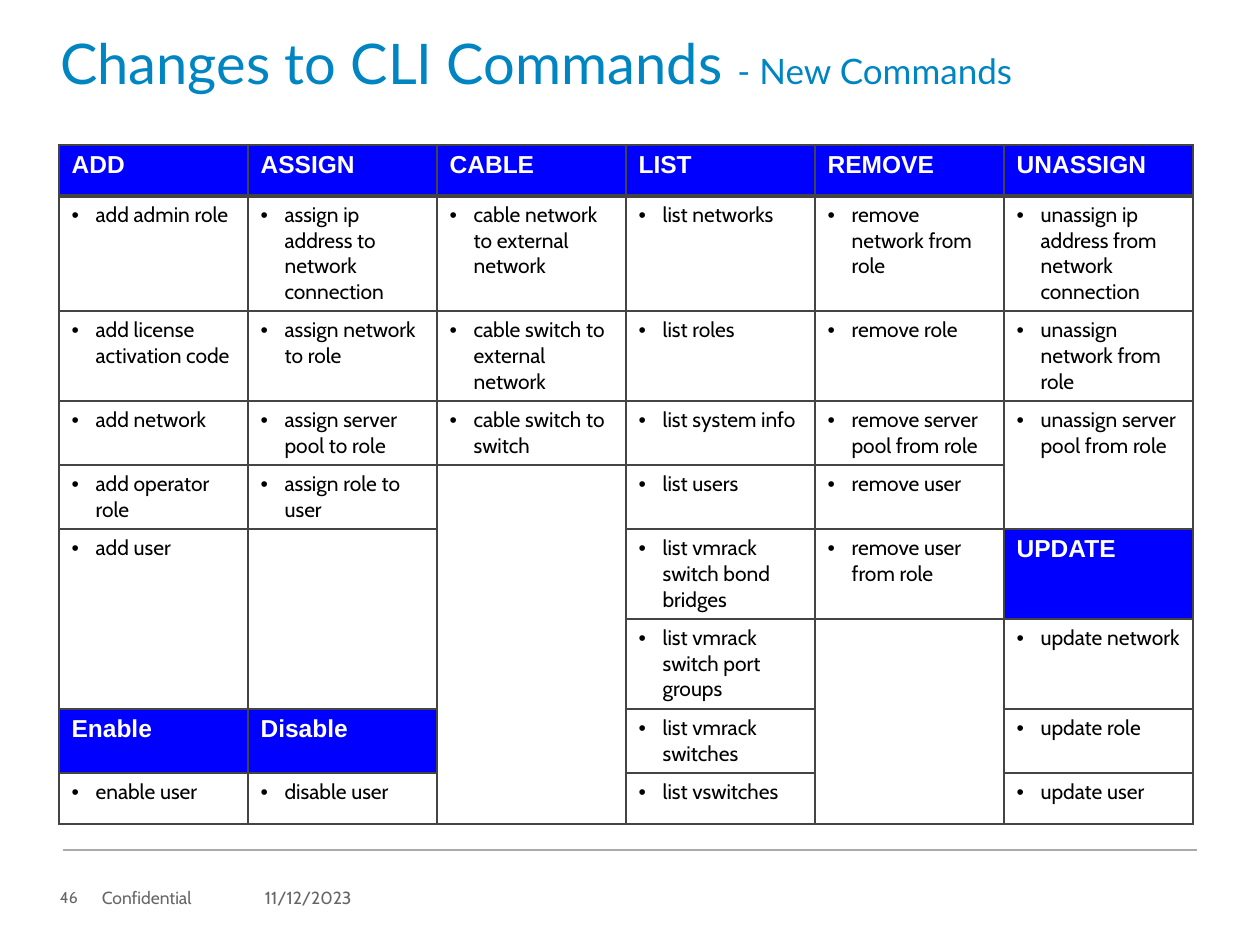
from lxml import etree
from pptx import Presentation
from pptx.dml.color import RGBColor
from pptx.enum.shapes import MSO_CONNECTOR
from pptx.enum.text import MSO_ANCHOR, MSO_AUTO_SIZE, PP_ALIGN
from pptx.oxml.ns import qn
from pptx.util import Emu, Pt

TOP, MIDDLE = MSO_ANCHOR.TOP, MSO_ANCHOR.MIDDLE
LEFT = PP_ALIGN.LEFT
STRAIGHT = MSO_CONNECTOR.STRAIGHT
FIXED = MSO_AUTO_SIZE.NONE

SKY = RGBColor(0x00, 0x85, 0xC3)
BLUE = RGBColor(0x00, 0x00, 0xFF)
WHITE = RGBColor(0xFF, 0xFF, 0xFF)
BLACK = RGBColor(0x00, 0x00, 0x00)
DARK = RGBColor(0x44, 0x44, 0x44)
GRAY = RGBColor(0x66, 0x66, 0x66)
PALE = RGBColor(0xAA, 0xAA, 0xAA)

TITLE = [("Changes to CLI Commands ", 32), ("- New Commands", 20)]
ROWS = [
    ["ADD", "ASSIGN", "CABLE", "LIST", "REMOVE", "UNASSIGN"],
    ["add admin role", "assign ip address to network connection",
     "cable network to external network", "list networks",
     "remove network from role", "unassign ip address from network connection"],
    ["add license activation code", "assign network to role",
     "cable switch to external network", "list roles", "remove role",
     "unassign network from role"],
    ["add network", "assign server pool to role", "cable switch to switch",
     "list system info", "remove server pool from role",
     "unassign server pool from role"],
    ["add operator role", "assign role to user", "", "list users",
     "remove user", ""],
    ["add user", "", "", "list vmrack switch bond bridges",
     "remove user from role", "UPDATE"],
    ["", "", "", "list vmrack switch port groups", "", "update network"],
    ["Enable", "Disable", "", "list vmrack switches", "", "update role"],
    ["enable user", "disable user", "", "list vswitches", "", "update user"],
]
HEADS = set(ROWS[0]) | {"UPDATE", "Enable", "Disable"}
# column, first row, last row
MERGES = [(5, 3, 4), (2, 4, 8), (0, 5, 6), (1, 5, 6), (4, 6, 8)]
HEIGHTS = [51, 115, 90, 64, 64, 89, 90, 64, 51]
COL = 189
INDENT = 24
# text, left, width, size, left inset
FOOTERS = [("Confidential", 102, 260, 10, 0), ("46", 60, 35, 9, 0),
           ("11/12/2023", 252, 126, 10, 13)]


def px(n):
    return Emu(n * 914400 // 126)


def style(font, name, size, color, bold=False):
    font.name, font.size, font.bold = name, Pt(size), bold
    font.color.rgb = color


def place(shape, x, y, w, h):
    shape.left, shape.top, shape.width, shape.height = map(px, (x, y, w, h))


def inset(frame, left, right, upper=0, lower=0):
    frame.margin_left, frame.margin_right = px(left), px(right)
    frame.margin_top, frame.margin_bottom = px(upper), px(lower)


def border(cell, row):
    """Outline a cell; the rule under the top row is thicker."""
    props = cell._tc.get_or_add_tcPr()
    widths = {"L": 1, "R": 1, "T": 3 if row == 1 else 1,
              "B": 3 if row == 0 else 1}
    for i, (side, width) in enumerate(widths.items()):
        line = etree.Element(qn("a:ln" + side), w=str(Pt(width)))
        fill = etree.SubElement(line, qn("a:solidFill"))
        etree.SubElement(fill, qn("a:srgbClr"), val=str(DARK))
        props.insert(i, line)


def bullet(para):
    props = para._p.get_or_add_pPr()
    props.set("marL", str(px(INDENT)))
    props.set("indent", str(-px(INDENT)))
    etree.SubElement(props, qn("a:buFont"), typeface="Arial")
    etree.SubElement(props, qn("a:buChar"), char="•")


def add_title(slide):
    shape = slide.shapes.title
    place(shape, 60, 36, 1135, 109)
    frame = shape.text_frame
    inset(frame, 0, 0)
    frame.vertical_anchor, frame.auto_size = TOP, FIXED
    frame.word_wrap = True
    para = frame.paragraphs[0]
    para.alignment, para.line_spacing = LEFT, 0.9
    for text, size in TITLE:
        run = para.add_run()
        run.text = text
        style(run.font, "Lato", size, SKY)


def add_grid(slide):
    count = len(ROWS[0])
    table = slide.shapes.add_table(
        len(ROWS), count, px(59), px(145), px(COL * count),
        px(sum(HEIGHTS))).table
    for col in table.columns:
        col.width = px(COL)
    for r, (texts, height) in enumerate(zip(ROWS, HEIGHTS)):
        table.rows[r].height = px(height)
        for c, text in enumerate(texts):
            cell = table.cell(r, c)
            head = text in HEADS
            cell.fill.solid()
            cell.fill.fore_color.rgb = BLUE if head else WHITE
            border(cell, r)
            para = cell.text_frame.paragraphs[0]
            para.text = text
            if head:
                style(para.font, "Arial", 14, WHITE, True)
            else:
                if text:
                    bullet(para)
                style(para.font, "Cabin", 12, BLACK)
            for run in para.runs:
                look = ("Arial", 14, WHITE, True) if head else (
                    "Cabin", 12, BLACK)
                style(run.font, *look)
    for c, first, last in MERGES:
        table.cell(first, c).merge(table.cell(last, c))


def add_footer(slide):
    rule = slide.shapes.add_connector(
        STRAIGHT, px(63), px(850), px(1197), px(850))
    rule.line.color.rgb, rule.line.width = PALE, Pt(0.75)
    etree.SubElement(rule._element.spPr, qn("a:effectLst"))
    for text, x, width, size, left in FOOTERS:
        box = slide.shapes.add_textbox(px(x), px(886), px(width), px(22))
        frame = box.text_frame
        frame.word_wrap, frame.vertical_anchor = True, MIDDLE
        inset(frame, left, 13)
        frame.text = text
        style(frame.paragraphs[0].runs[0].font, "Cabin", size, GRAY)


def main():
    deck = Presentation()
    deck.slide_width, deck.slide_height = px(1260), px(945)
    slide = deck.slides.add_slide(deck.slide_layouts[5])
    add_title(slide)
    add_grid(slide)
    add_footer(slide)
    deck.save("out.pptx")


if __name__ == "__main__":
    main()
